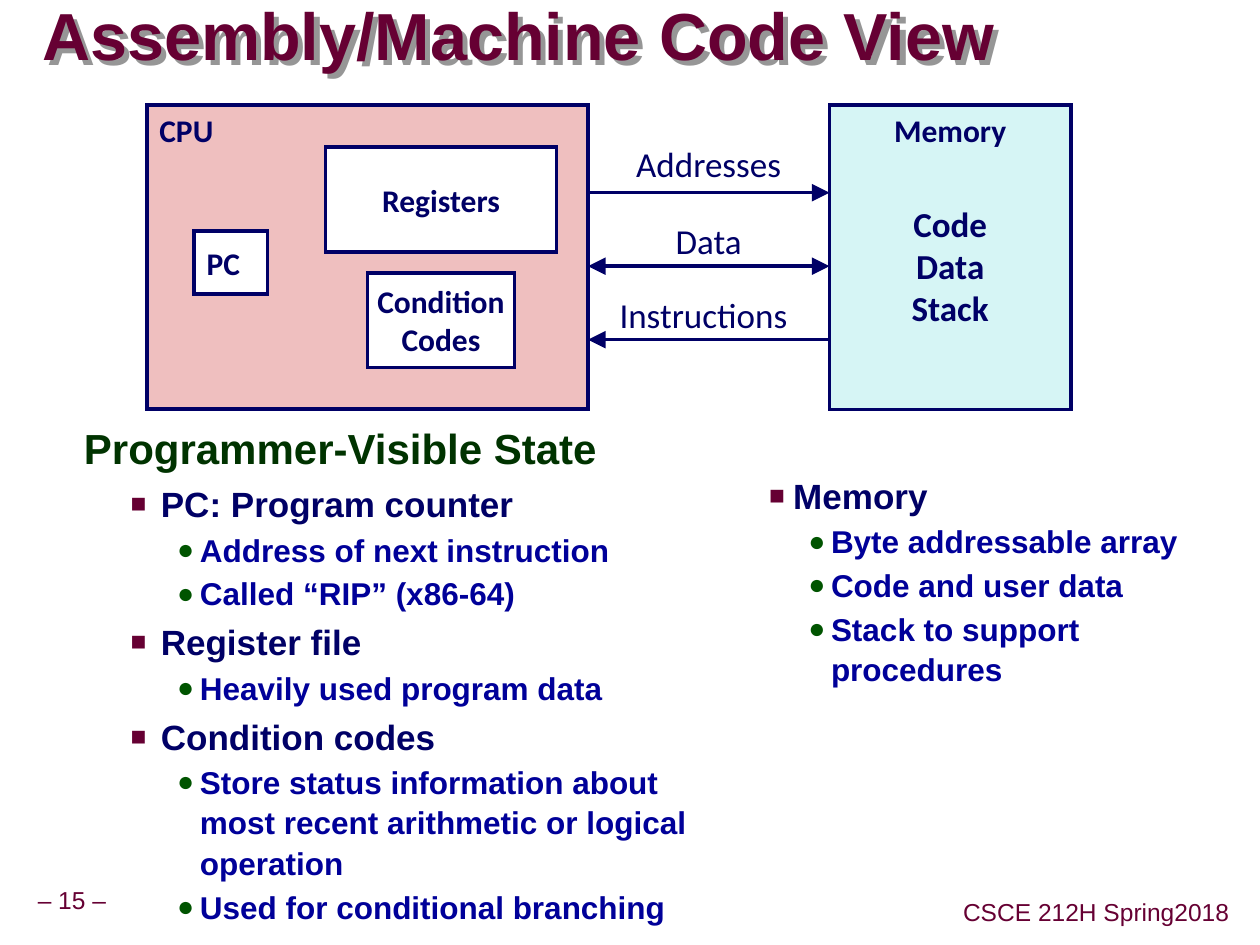
from dataclasses import dataclass

import pptx
import pptx.dml.color
import pptx.enum.shapes
import pptx.enum.text
import pptx.oxml
import pptx.oxml.ns
import pptx.util

ALIGN = pptx.enum.text.PP_ALIGN
ANCHOR = pptx.enum.text.MSO_ANCHOR
FIT = pptx.enum.text.MSO_AUTO_SIZE
NS = pptx.oxml.ns.nsdecls("a")
NAVY, MAROON, WHITE = "000066", "660033", "FFFFFF"
COLUMNS, ROWS = 120, 90

deck = pptx.Presentation()
deck.slide_width, deck.slide_height = pptx.util.Inches(10), pptx.util.Inches(7.5)
slide = deck.slides.add_slide(deck.slide_layouts[3])


@dataclass
class Area:
    col: float
    row: float
    cols: float
    rows: float


@dataclass
class Style:
    size: float
    color: str = NAVY
    bold: bool = True
    font: str = "Calibri"
    align: ALIGN = ALIGN.CENTER
    spacing: float = 1.0


@dataclass
class Block:
    area: Area
    lines: list[str]
    fill: str = WHITE
    align: ALIGN = ALIGN.CENTER
    anchor: ANCHOR = ANCHOR.MIDDLE
    border: float = 2


@dataclass
class Bus:
    name: str
    row: float
    label_row: float
    label_cols: float
    to_cpu: bool
    to_memory: bool


@dataclass
class Level:
    style: Style
    before: float
    bullet: str = ""
    bullet_color: str = ""
    bullet_percent: int = 100


LEVELS = [
    Level(Style(24, "003300", True, "Arial", ALIGN.LEFT, 0.95), 0),
    Level(Style(20, NAVY, True, "Arial", ALIGN.LEFT), 5, "■", MAROON, 75),
    Level(Style(18, "000099", True, "Arial", ALIGN.LEFT, 1.07), 1.8, "●", "005400", 90),
]


def rgb(color: str) -> pptx.dml.color.RGBColor:
    return pptx.dml.color.RGBColor.from_string(color)


def across(cols: float) -> int:
    return round(deck.slide_width * cols / COLUMNS)


def down(rows: float) -> int:
    return round(deck.slide_height * rows / ROWS)


def bounds(area: Area) -> tuple[int, int, int, int]:
    return across(area.col), down(area.row), across(area.cols), down(area.rows)


def place(shape, area: Area) -> None:
    shape.left, shape.top, shape.width, shape.height = bounds(area)


def set_margins(frame, inches: float) -> None:
    margin = pptx.util.Inches(inches)
    frame.margin_left = frame.margin_right = margin
    frame.margin_top = frame.margin_bottom = margin


def add_run(paragraph, text: str, style: Style) -> None:
    paragraph.alignment = style.align
    paragraph.line_spacing = style.spacing
    run = paragraph.add_run()
    run.text = text
    run.font.name, run.font.size = style.font, pptx.util.Pt(style.size)
    run.font.bold = style.bold
    run.font.color.rgb = rgb(style.color)


def write(frame, lines: list[str], style: Style, anchor: ANCHOR, wrap: bool) -> None:
    frame.word_wrap, frame.vertical_anchor = wrap, anchor
    for index, line in enumerate(lines):
        paragraph = frame.add_paragraph() if index else frame.paragraphs[0]
        add_run(paragraph, line, style)


def add_block(block: Block) -> None:
    shape = slide.shapes.add_shape(
        pptx.enum.shapes.MSO_SHAPE.RECTANGLE, *bounds(block.area))
    shape.shadow.inherit = False
    shape.fill.solid()
    shape.fill.fore_color.rgb = rgb(block.fill)
    shape.line.color.rgb = rgb(NAVY)
    shape.line.width = pptx.util.Pt(block.border)
    shape.line._get_or_add_ln().append(
        pptx.oxml.parse_xml(f'<a:miter {NS} lim="800000"/>'))
    write(shape.text_frame, block.lines, Style(18, align=block.align),
          block.anchor, block.align == ALIGN.LEFT)


def add_label(area: Area, lines: list[str], style: Style) -> None:
    frame = slide.shapes.add_textbox(*bounds(area)).text_frame
    write(frame, lines, style, ANCHOR.TOP, True)


def add_footer(area: Area, text: str) -> None:
    frame = slide.shapes.add_textbox(*bounds(area)).text_frame
    set_margins(frame, 0.05)
    frame.auto_size = FIT.SHAPE_TO_FIT_TEXT
    write(frame, [text], Style(14, MAROON, False, "Arial", spacing=0.9),
          ANCHOR.MIDDLE, False)


def add_bus(bus: Bus, start: float, end: float) -> None:
    wire = slide.shapes.add_connector(
        pptx.enum.shapes.MSO_CONNECTOR.STRAIGHT,
        across(start), down(bus.row), across(end), down(bus.row))
    wire.line.color.rgb = rgb(NAVY)
    wire.line.width = pptx.util.Pt(2)
    for tag, shown in (("headEnd", bus.to_cpu), ("tailEnd", bus.to_memory)):
        if shown:
            wire.line._get_or_add_ln().append(pptx.oxml.parse_xml(
                f'<a:{tag} {NS} type="triangle" w="lg" len="lg"/>'))
    wire._element.spPr.append(pptx.oxml.parse_xml(f"<a:effectLst {NS}/>"))
    add_label(Area(start, bus.label_row, bus.label_cols, 5.2), [bus.name],
              Style(20, bold=False))


def fill_outline(body, area: Area, items: list[tuple[int, str]],
                 indents: dict[int, tuple[float, float]]) -> None:
    place(body, area)
    frame = body.text_frame
    frame.auto_size = FIT.NONE
    frame.word_wrap, frame.vertical_anchor = True, ANCHOR.TOP
    for index, (depth, text) in enumerate(items):
        level = LEVELS[depth]
        margin, hanging = indents[depth]
        paragraph = frame.add_paragraph() if index else frame.paragraphs[0]
        paragraph.level = depth
        properties = paragraph._p.get_or_add_pPr()
        properties.set("marL", str(pptx.util.Inches(margin)))
        properties.set("indent", str(-pptx.util.Inches(hanging)))
        if level.bullet:
            marks = [f'<a:buClr {NS}><a:srgbClr val="{level.bullet_color}"/></a:buClr>',
                     f'<a:buSzPct {NS} val="{level.bullet_percent * 1000}"/>',
                     f'<a:buFont {NS} typeface="Arial"/>',
                     f'<a:buChar {NS} char="{level.bullet}"/>']
        else:
            marks = [f"<a:buNone {NS}/>"]
        for mark in marks:
            properties.append(pptx.oxml.parse_xml(mark))
        paragraph.space_before = pptx.util.Pt(level.before if index else 0)
        add_run(paragraph, text, level.style)


title, state_list, memory_list = slide.placeholders
place(title, Area(4, 0, 94.8, 7.5))
title.fill.background()
title._element.spPr.append(pptx.oxml.parse_xml(
    f'<a:effectLst {NS}><a:outerShdw dist="53882" dir="2700000" algn="ctr" rotWithShape="0">'
    '<a:srgbClr val="969696"/></a:outerShdw></a:effectLst>'))
title.text_frame.auto_size = FIT.NONE
set_margins(title.text_frame, 0)
write(title.text_frame, ["Assembly/Machine Code View"],
      Style(38, MAROON, True, "Arial", ALIGN.LEFT, 0.87), ANCHOR.MIDDLE, True)

fill_outline(state_list, Area(6.8, 40, 63.7, 40.5), [
    (0, "Programmer-Visible State"),
    (1, "PC: Program counter"),
    (2, "Address of next instruction"),
    (2, "Called “RIP” (x86-64)"),
    (1, "Register file"),
    (2, "Heavily used program data"),
    (1, "Condition codes"),
    (2, "Store status information about most recent arithmetic or logical operation"),
    (2, "Used for conditional branching"),
], {0: (0.25, 0.25), 1: (0.61, 0.24), 2: (0.92, 0.18)})
fill_outline(memory_list, Area(70.5, 44.6, 47.5, 20.6), [
    (1, "Memory"),
    (2, "Byte addressable array"),
    (2, "Code and user data"),
    (2, "Stack to support procedures"),
], {1: (0.32, 0.19), 2: (0.62, 0.18)})

cpu, memory = Area(14, 10, 42, 29), Area(79, 10, 23, 29)
for part in (
    Block(cpu, ["CPU"], "EFBFBF", ALIGN.LEFT, ANCHOR.TOP, 2.25),
    Block(Area(18.5, 22, 7, 6), ["PC"], align=ALIGN.LEFT),
    Block(Area(31, 14, 22, 10), ["Registers"]),
    Block(Area(35, 26, 14, 9), ["Condition", "Codes"]),
    Block(memory, ["Memory"], "D6F5F5", anchor=ANCHOR.TOP),
):
    add_block(part)
add_label(Area(83, 18.7, 15, 13.3), ["Code", "Data", "Stack"], Style(20))

for bus in (
    Bus("Addresses", 18.35, 13, 23, False, True),
    Bus("Data", 25.35, 20.3, 23, True, True),
    Bus("Instructions", 32.35, 27.4, 22, True, False),
):
    add_bus(bus, cpu.col + cpu.cols, memory.col)

add_footer(Area(2.9, 84, 7.9, 3.7), "– 15 –")
add_footer(Area(91, 85.2, 26.8, 3.7), "CSCE 212H Spring2018")

deck.save("out.pptx")
